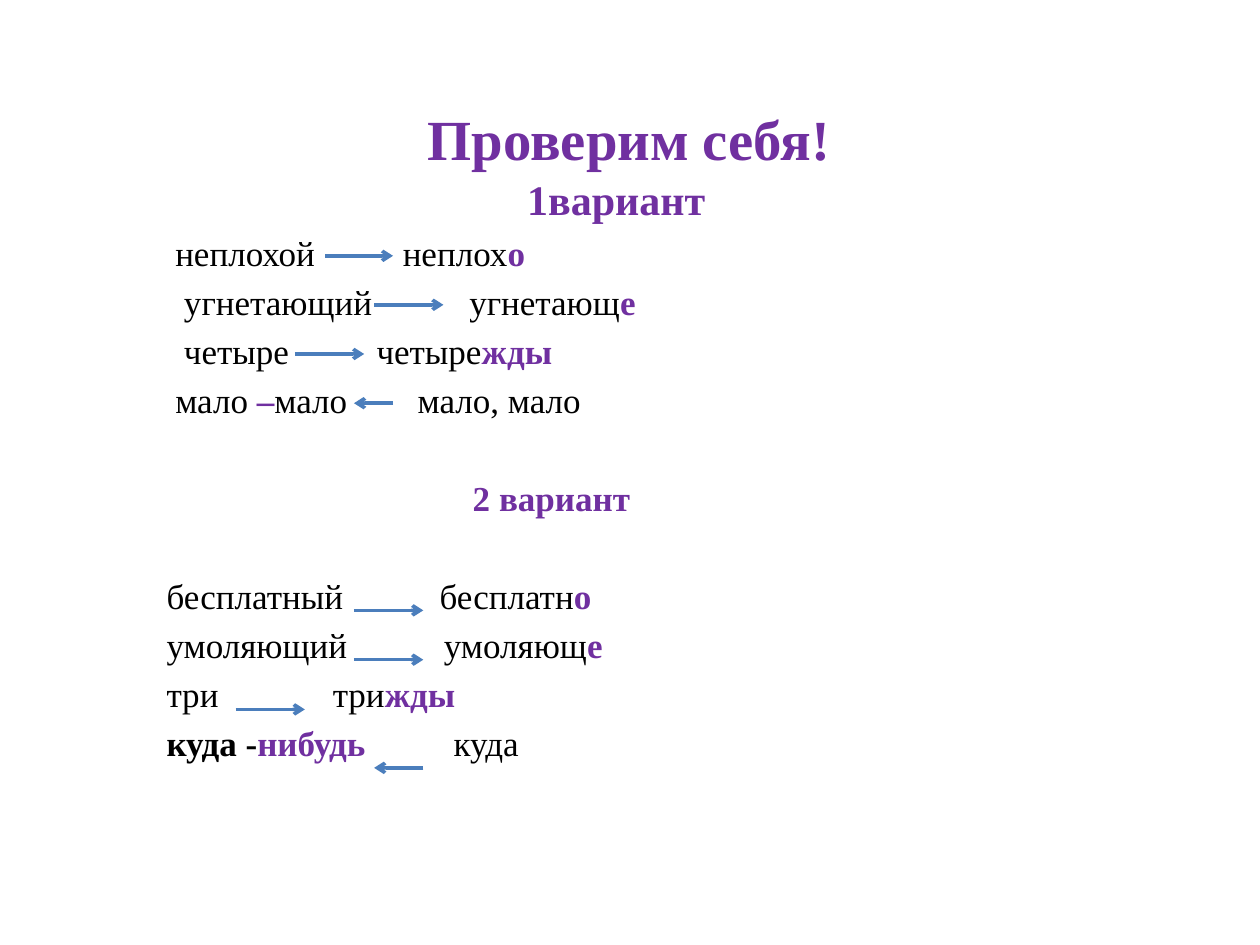
from dataclasses import dataclass

from lxml import etree
from pptx import Presentation
from pptx.dml.color import RGBColor
from pptx.enum.shapes import MSO_CONNECTOR
from pptx.enum.text import MSO_ANCHOR, PP_ALIGN
from pptx.oxml.ns import qn
from pptx.util import Pt

STRAIGHT = MSO_CONNECTOR.STRAIGHT
MIDDLE, TOP = MSO_ANCHOR.MIDDLE, MSO_ANCHOR.TOP
CENTER = PP_ALIGN.CENTER


@dataclass(frozen=True)
class Theme:
    font: str = "Times New Roman"
    accent: RGBColor = RGBColor(0x70, 0x30, 0xA0)
    ink: RGBColor = RGBColor(0, 0, 0)
    arrow: RGBColor = RGBColor(0x4B, 0x7E, 0xBC)
    title_size: float = 32.4
    heading_size: float = 24
    body_size: float = 20
    arrow_width: float = 2
    row_gap: float = 4
    section_gap: float = 32


class SlideBuilder:
    def __init__(self, slide, theme):
        self.slide, self.theme = slide, theme

    def text_box(self, left, top, width, height, anchor=TOP):
        box = self.slide.shapes.add_textbox(Pt(left), Pt(top), Pt(width), Pt(height))
        frame = box.text_frame
        frame.word_wrap = True
        frame.vertical_anchor = anchor
        return frame

    def style(self, font, color, bold):
        font.color.rgb = color
        font.bold = bold

    def heading(self, paragraph, text, size):
        paragraph.alignment = CENTER
        paragraph.font.name = self.theme.font
        paragraph.font.size = Pt(size)
        self.style(paragraph.font, self.theme.accent, True)
        paragraph.add_run().text = text

    def set_tabs(self, paragraph, stops):
        tab_list = etree.SubElement(paragraph._p.get_or_add_pPr(), qn("a:tabLst"))
        for stop in stops:
            etree.SubElement(tab_list, qn("a:tab"), pos=str(Pt(stop)), algn="l")

    def word_row(self, frame, stops, parts, gap):
        """Add a row of (text, is_accent, is_bold) parts aligned on tab stops."""
        paragraph = frame.add_paragraph()
        paragraph.space_before = Pt(gap)
        self.set_tabs(paragraph, stops)
        paragraph.font.name = self.theme.font
        paragraph.font.size = Pt(self.theme.body_size)
        for text, is_accent, is_bold in parts:
            run = paragraph.add_run()
            run.text = text
            self.style(run.font, self.theme.accent if is_accent else self.theme.ink, is_bold)

    def arrow(self, start, end, y):
        line = self.slide.shapes.add_connector(STRAIGHT, Pt(start), Pt(y), Pt(end), Pt(y))
        line.line.color.rgb = self.theme.arrow
        line.line.width = Pt(self.theme.arrow_width)
        etree.SubElement(line.line._get_or_add_ln(), qn("a:tailEnd"), type="arrow")
        etree.SubElement(line._element.spPr, qn("a:effectLst"))


def plain(text):
    return text, False, False


def accent(text):
    return text, True, True


# Tab stops of a row, then its parts.
VARIANT_1 = [
    ((65, 195), [plain("\tнеплохой\tнеплох"), accent("о")]),
    ((70, 233), [plain("\tугнетающий\tугнетающ"), accent("е")]),
    ((70, 180), [plain("\tчетыре\tчетыре"), accent("жды")]),
    ((65, 203.5), [plain("\tмало "), accent("–"), plain("мало\tмало, мало")]),
]
VARIANT_2 = [
    ((60, 216), [plain("\tбесплатный\tбесплатн"), accent("о")]),
    ((60, 218.5), [plain("\tумоляющий\tумоляющ"), accent("е")]),
    ((60, 155), [plain("\tтри\tтри"), accent("жды")]),
    ((60, 224), [("\tкуда -", False, True), accent("нибудь"), plain("\tкуда")]),
]
# Start x, end x and y of each arrow.
ARROWS = [
    (185.8, 224.6, 146.2), (213.8, 253.4, 174.2), (168.5, 208.1, 202.3), (224.6, 202.3, 230.4),
    (202.3, 241.9, 348.8), (202.3, 241.9, 377), (134.6, 174.2, 405.4), (241.9, 213.8, 438.8),
]


def main():
    presentation = Presentation()
    presentation.slide_width, presentation.slide_height = Pt(720), Pt(540)
    slide = presentation.slides.add_slide(presentation.slide_layouts[6])
    theme = Theme()
    builder = SlideBuilder(slide, theme)

    title = builder.text_box(39.6, 56.2, 648, 45.4, MIDDLE)
    builder.heading(title.paragraphs[0], "Проверим себя! ", theme.title_size)

    answers = builder.text_box(28.1, 95.7, 648, 386.6)
    builder.heading(answers.paragraphs[0], "1вариант", theme.heading_size)
    for stops, parts in VARIANT_1:
        builder.word_row(answers, stops, parts, theme.row_gap)
    builder.word_row(answers, (235,), [accent("\t2 вариант")], theme.section_gap)
    for row, (stops, parts) in enumerate(VARIANT_2):
        builder.word_row(answers, stops, parts, theme.row_gap if row else theme.section_gap)

    for start, end, y in ARROWS:
        builder.arrow(start, end, y)

    presentation.save("out.pptx")


if __name__ == "__main__":
    main()
